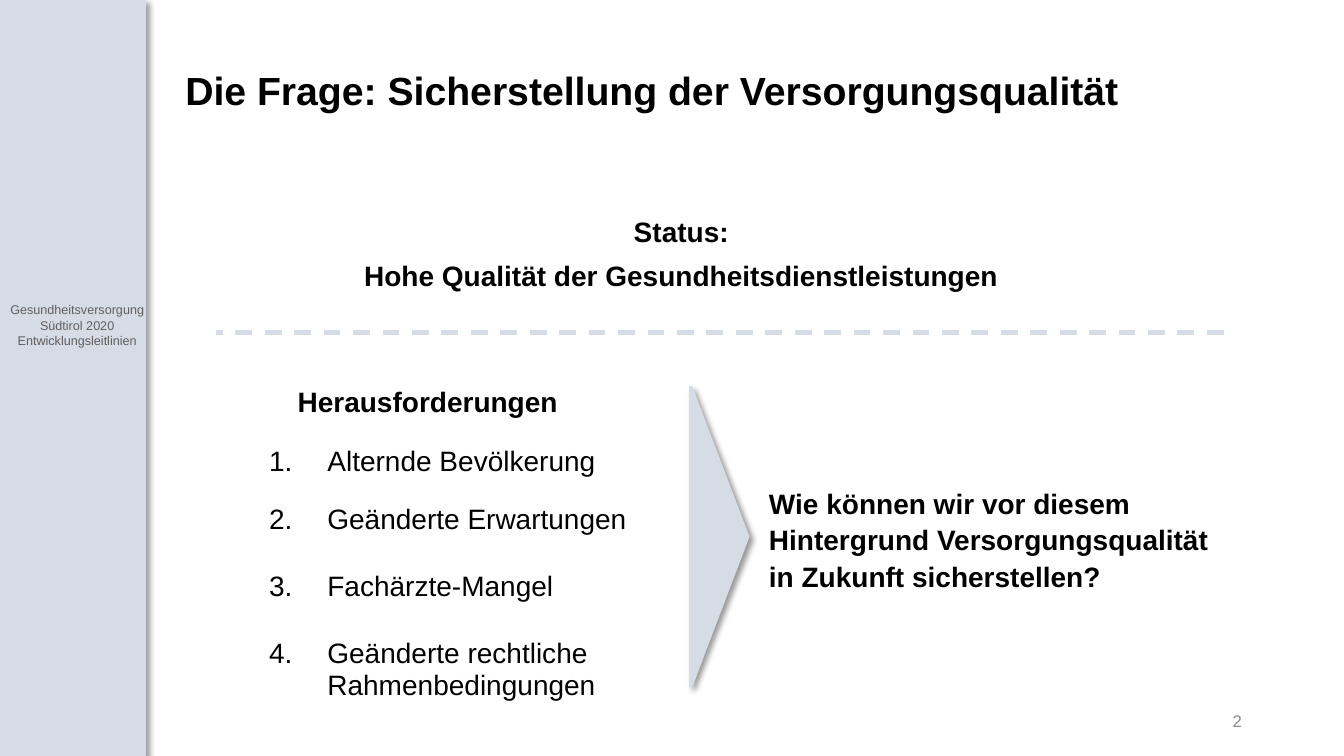
"""Builds the slide on securing the quality of health care."""
from lxml import etree
from pptx import Presentation
from pptx import util as u
from pptx.dml.color import RGBColor
from pptx.enum import dml, shapes, text
from pptx.oxml import ns

BLACK = RGBColor(0x00, 0x00, 0x00)
PALE_BLUE = RGBColor(0xD6, 0xDC, 0xE5)
SIDE_GREY = RGBColor(0x5F, 0x5F, 0x5F)
NUMBER_GREY = RGBColor(0x8C, 0x8C, 0x8C)

LEFT, CENTER, RIGHT = text.PP_ALIGN.LEFT, text.PP_ALIGN.CENTER, text.PP_ALIGN.RIGHT
TOP, MIDDLE = text.MSO_ANCHOR.TOP, text.MSO_ANCHOR.MIDDLE
NARROW = (0.13, 0.13, 0.13, 0.13)
MEDIUM = (0.25, 0.13, 0.25, 0.13)
WIDE = (0.51, 0.13, 0.41, 0.13)


def assign(target, values):
    """Set every named attribute on the target."""
    for name, value in values.items():
        setattr(target, name, value)


class SlideBuilder:
    """Holds the slide and its style and draws each kind of element."""

    font_name = "Arial"
    number_indent = u.Cm(1.47)

    def __init__(self, slide):
        self.slide = slide

    def fill_text(self, holder, box, lines, size=20, bold=False, color=BLACK,
                  align=LEFT, anchor=MIDDLE, insets=WIDE, spacing=1.0, gaps=None):
        """Place a text holder and fill it; gaps make a numbered list."""
        assign(holder, dict(zip(("left", "top", "width", "height"), map(u.Cm, box))))
        frame = holder.text_frame
        sides = ("margin_left", "margin_top", "margin_right", "margin_bottom")
        assign(frame, dict(zip(sides, map(u.Cm, insets))))
        assign(frame, {"word_wrap": True, "auto_size": text.MSO_AUTO_SIZE.NONE,
                       "vertical_anchor": anchor})
        for index, line in enumerate(lines):
            paragraph = frame.paragraphs[0] if index == 0 else frame.add_paragraph()
            if gaps:
                self.number(paragraph)
            assign(paragraph, {"alignment": align, "line_spacing": spacing,
                               "space_before": u.Pt(0),
                               "space_after": u.Pt(gaps[index] if gaps else 0)})
            run = paragraph.add_run()
            run.text = line
            assign(run.font, {"name": self.font_name, "size": u.Pt(size), "bold": bold})
            run.font.color.rgb = color

    def number(self, paragraph):
        """Give a paragraph an automatic number and a hanging indent."""
        properties = paragraph._p.get_or_add_pPr()
        properties.set("marL", str(self.number_indent))
        properties.set("indent", str(-self.number_indent))
        etree.SubElement(properties, ns.qn("a:buFont"), typeface="+mj-lt")
        etree.SubElement(properties, ns.qn("a:buAutoNum"), type="arabicPeriod")

    def textbox(self, box, lines, **style):
        """Add a free text box."""
        holder = self.slide.shapes.add_textbox(*map(u.Cm, box))
        self.fill_text(holder, box, lines, **style)

    def panel(self, preset, box, adjustment=None):
        """Add a pale shape with a soft shadow."""
        panel = self.slide.shapes.add_shape(preset, *map(u.Cm, box))
        panel.fill.solid()
        panel.fill.fore_color.rgb = PALE_BLUE
        panel.line.fill.background()
        if adjustment is not None:
            panel.adjustments[0] = adjustment
        panel.shadow.inherit = False
        effects = panel._element.spPr.find(ns.qn("a:effectLst"))
        shadow = etree.SubElement(effects, ns.qn("a:outerShdw"), blurRad=str(u.Pt(4)),
                                  dist=str(u.Pt(3)), dir=str(45 * 60000),
                                  algn="tl", rotWithShape="0")
        shade = etree.SubElement(shadow, ns.qn("a:srgbClr"), val=str(BLACK))
        etree.SubElement(shade, ns.qn("a:alpha"), val="40000")

    def dashed_line(self, *ends):
        """Add a dashed straight line."""
        line = self.slide.shapes.add_connector(shapes.MSO_CONNECTOR.STRAIGHT,
                                               *map(u.Cm, ends))
        line.line.color.rgb = PALE_BLUE
        assign(line.line, {"width": u.Pt(3), "dash_style": dml.MSO_LINE.DASH})
        etree.SubElement(line._element.spPr, ns.qn("a:effectLst"))


def main():
    """Build the slide and save it."""
    deck = Presentation()
    assign(deck, {"slide_width": u.Cm(33.87), "slide_height": u.Cm(19.05)})
    slide = deck.slides.add_slide(deck.slide_layouts[1])
    title, challenges = slide.placeholders
    builder = SlideBuilder(slide)

    builder.panel(shapes.MSO_SHAPE.RECTANGLE, (0, 0, 3.68, 19.05))
    builder.textbox((0, 7.49, 3.89, 1.78),
                    ["Gesundheitsversorgung Südtirol 2020", "Entwicklungsleitlinien"],
                    size=9, color=SIDE_GREY, align=CENTER, anchor=TOP, insets=NARROW)
    builder.fill_text(title, (4.42, 1.02, 28.22, 2.62),
                      ["Die Frage: Sicherstellung der Versorgungsqualität"],
                      size=28, bold=True, insets=MEDIUM, spacing=0.9)
    builder.textbox((3.99, 5.05, 26.26, 2.41),
                    ["Status:", "Hohe Qualität der Gesundheitsdienstleistungen"],
                    bold=True, align=CENTER, spacing=u.Pt(31))
    builder.dashed_line(30.84, 8.38, 5.44, 8.38)

    builder.textbox((6.99, 9.3, 11.68, 1.4), ["Herausforderungen"],
                    bold=True, spacing=u.Pt(31))
    builder.fill_text(challenges, (6.27, 11.1, 11.79, 6.6),
                      ["Alternde Bevölkerung", "Geänderte Erwartungen",
                       "Fachärzte-Mangel", "Geänderte rechtliche Rahmenbedingungen"],
                      anchor=TOP, spacing=0.95, gaps=(19, 25, 25, 0))
    builder.panel(shapes.MSO_SHAPE.PENTAGON, (17.37, 9.73, 1.52, 7.59), 0.95)
    builder.textbox((18.87, 10.64, 12.42, 5.84),
                    ["Wie können wir vor diesem Hintergrund Versorgungsqualität",
                     "in Zukunft sicherstellen?"],
                    bold=True, spacing=u.Pt(26))
    builder.textbox((23.93, 17.65, 7.62, 1.02), ["2"], size=12, color=NUMBER_GREY,
                    align=RIGHT, insets=MEDIUM)
    deck.save("out.pptx")


if __name__ == "__main__":
    main()
